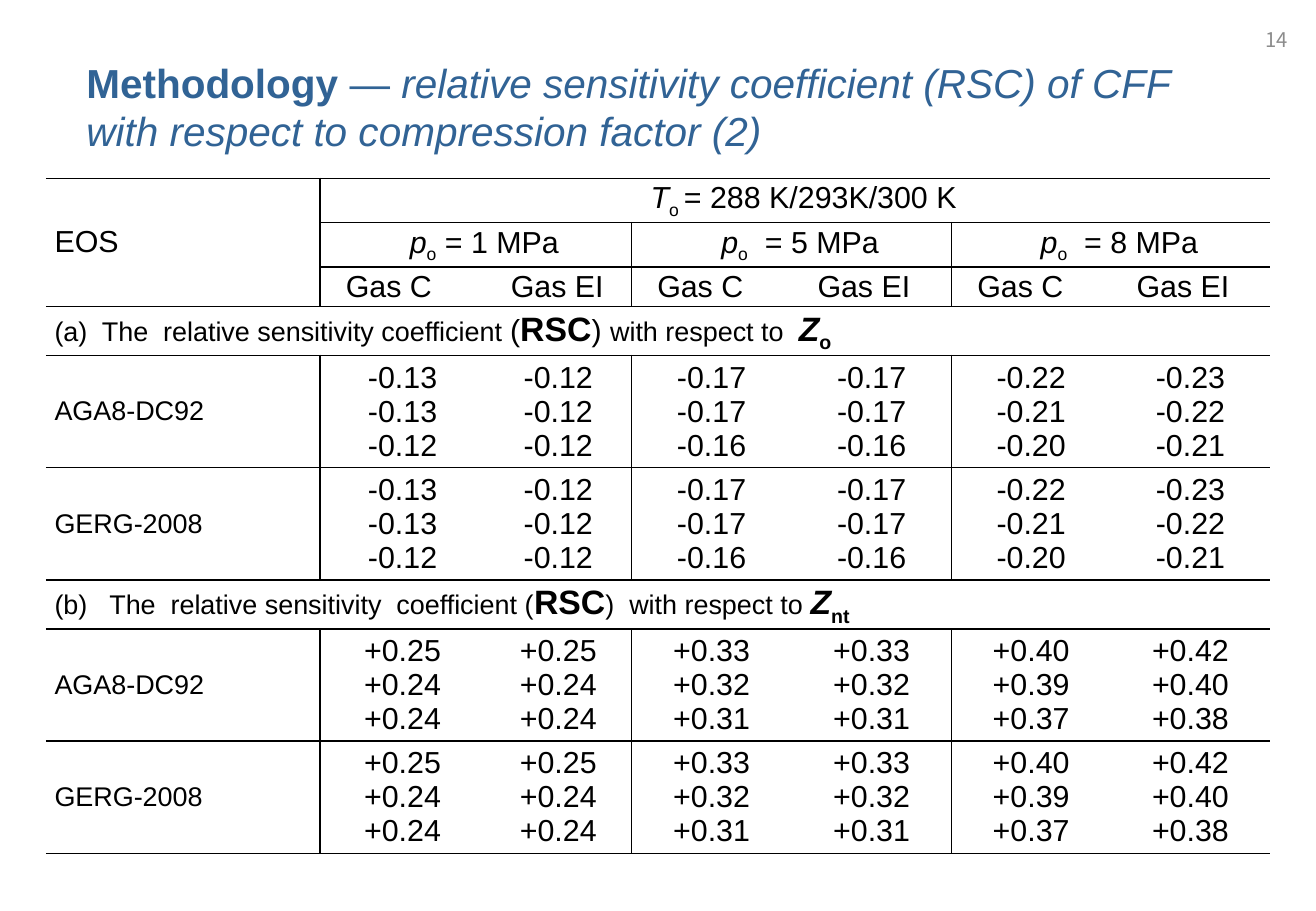
import pptx
import pptx.dml.color
import pptx.enum.text
import pptx.oxml.ns
import pptx.util
from lxml import etree

Cm = pptx.util.Cm
Pt = pptx.util.Pt
ALIGN = pptx.enum.text.PP_ALIGN
ANCHOR = pptx.enum.text.MSO_ANCHOR
BLACK, BLUE, GREY = "000000", "316395", "8C8C8C"
WIDTHS = [5.73, 3.45, 3.06, 3.35, 3.34, 3.33, 3.33]
HEIGHTS = [0.81, 0.91, 0.9, 0.82, 1.0, 2.23, 2.23, 1.0, 2.23, 2.23, 0.81]
EOS = ["AGA8-DC92", "GERG-2008"]
PRESSURES = [" = 1 MPa", "  = 5 MPa", "  = 8 MPa"]
CAPTIONS = {
    4: [("(a)  The  relative sensitivity coefficient ", 16, ""), ("(", 18, ""),
        ("RSC", 20, "b"), (") ", 18, ""), ("with respect to  ", 16, ""),
        ("Z", 20, "bi"), ("o", 20, "bs")],
    7: [("(b)   The  relative sensitivity  coefficient (", 16, ""),
        ("RSC", 20, "b"), (")  with respect to ", 16, ""),
        ("Z", 20, "bi"), ("nt", 20, "bs")],
}
RSC = {
    5: ["-0.13 -0.13 -0.12", "-0.12 -0.12 -0.12", "-0.17 -0.17 -0.16",
        "-0.17 -0.17 -0.16", "-0.22 -0.21 -0.20", "-0.23 -0.22 -0.21"],
    8: ["+0.25 +0.24 +0.24", "+0.25 +0.24 +0.24", "+0.33 +0.32 +0.31",
        "+0.33 +0.32 +0.31", "+0.40 +0.39 +0.37", "+0.42 +0.40 +0.38"],
}


def rgb(code):
    """Turn a hex string into a colour."""
    return pptx.dml.color.RGBColor.from_string(code)


def style(font, size, color=BLACK, name="Arial"):
    """Set size, colour and typeface of a font."""
    font.size, font.name = Pt(size), name
    font.color.rgb = rgb(color)


def write(para, runs, color=BLACK):
    """Add (text, size, marks) runs: b bold, i italic, s subscript."""
    for text, size, marks in runs:
        run = para.add_run()
        run.text = text
        style(run.font, size, color)
        run.font.bold, run.font.italic = "b" in marks, "i" in marks
        if "s" in marks:
            run.font._element.set("baseline", "-25000")


def border(cell, sides):
    """Draw black lines on the named sides and none on the others."""
    props = cell._tc.get_or_add_tcPr()
    for side in "LRTB":
        line = etree.SubElement(props, pptx.oxml.ns.qn("a:ln" + side), w=str(Pt(1)))
        if side in sides:
            fill = etree.SubElement(line, pptx.oxml.ns.qn("a:solidFill"))
            etree.SubElement(fill, pptx.oxml.ns.qn("a:srgbClr"), val=BLACK)
        else:
            etree.SubElement(line, pptx.oxml.ns.qn("a:noFill"))


def sides(row, col):
    """Name the ruled sides of a cell from its place in the grid."""
    last = len(HEIGHTS) - 1
    if row in (0, last):
        return "B" if row == 0 else "T"
    if row in CAPTIONS:
        return "TB"
    if col == 0:
        return "R" + {1: "T", 2: "", 3: "B"}.get(row, "TB")
    ruled = "TB"
    if col == 1 or (row > 1 and col % 2):
        ruled += "L"
    if row > 1 and col in (2, 4):
        ruled += "R"
    if row == 2 and col in (1, 3):
        ruled += "R"
    return ruled


def fill(cell, lines, align=ALIGN.LEFT, indent=0):
    """Write lines of runs into a cell, one paragraph each."""
    frame = cell.text_frame
    for num, runs in enumerate(lines):
        para = frame.add_paragraph() if num else frame.paragraphs[0]
        para.alignment = align
        if indent:
            para._p.get_or_add_pPr().set("marL", str(Cm(indent)))
        write(para, runs)


def shrink(cell):
    """Give an empty cell a small type size, so its row keeps its height."""
    para = cell.text_frame.paragraphs[0]._p
    etree.SubElement(para, pptx.oxml.ns.qn("a:endParaRPr"), sz="800")


def head(table):
    """Fill the three heading rows."""
    fill(table.cell(1, 0), [[("EOS", 18, "")]])
    fill(table.cell(1, 1), [[("T", 18, "i"), ("o ", 18, "s"),
                             ("= 288 K/293K/300 K", 18, "")]], ALIGN.CENTER, 0.36)
    for num, text in enumerate(PRESSURES):
        col = 1 + 2 * num
        fill(table.cell(2, col), [[("p", 18, "i"), ("o", 18, "s"), (text, 18, "")]],
             ALIGN.CENTER, 0.36)
        for step, gas in enumerate(["Gas C", "Gas EI"]):
            fill(table.cell(3, col + step), [[(gas, 18, "")]], indent=0.36)


def body(table):
    """Fill the captions and the coefficient rows."""
    for row, runs in CAPTIONS.items():
        fill(table.cell(row, 0), [runs])
        table.cell(row, 0).vertical_anchor = ANCHOR.BOTTOM
    for top, values in RSC.items():
        for row, name in enumerate(EOS, top):
            fill(table.cell(row, 0), [[(name, 16, "")]])
            for col, text in enumerate(values, 1):
                fill(table.cell(row, col), [[(part, 18, "")] for part in text.split()],
                     ALIGN.CENTER)


def grid(slide, left, top):
    """Build the ruled table at the given corner."""
    frame = slide.shapes.add_table(len(HEIGHTS), len(WIDTHS), Cm(left), Cm(top),
                                   Cm(sum(WIDTHS)), Cm(sum(HEIGHTS)))
    table = frame.table
    table.first_row = table.horz_banding = False
    for col, width in zip(table.columns, WIDTHS):
        col.width = Cm(width)
    for row, height in zip(table.rows, HEIGHTS):
        row.height = Cm(height)
    for row in range(len(HEIGHTS)):
        for col in range(len(WIDTHS)):
            cell = table.cell(row, col)
            cell.margin_left = cell.margin_right = Cm(0.18)
            cell.margin_top = cell.margin_bottom = Cm(0.03)
            cell.vertical_anchor = ANCHOR.MIDDLE
            border(cell, sides(row, col))
            cell.fill.background()
    for row in (0, 4, 7, len(HEIGHTS) - 1):
        table.cell(row, 0).merge(table.cell(row, 6))
    table.cell(1, 0).merge(table.cell(3, 0))
    table.cell(1, 1).merge(table.cell(1, 6))
    for col in (1, 3, 5):
        table.cell(2, col).merge(table.cell(2, col + 1))
    head(table)
    body(table)
    for cell in table.iter_cells():
        if not cell.text_frame.text:
            shrink(cell)


def title(slide, left, top, width, height):
    """Place and write the slide title."""
    shape = slide.shapes.title
    shape.left, shape.top, shape.width, shape.height = map(Cm, (left, top, width, height))
    frame = shape.text_frame
    frame.word_wrap = True
    frame.auto_size = pptx.enum.text.MSO_AUTO_SIZE.NONE
    frame.vertical_anchor = ANCHOR.MIDDLE
    para = frame.paragraphs[0]
    para.alignment = ALIGN.LEFT
    write(para, [("Methodology ", 24, "b"), ("― ", 24, ""),
                 ("relative sensitivity coefficient (RSC) of CFF "
                  "with respect to compression factor (2)", 24, "i")], BLUE)


def number(slide, left, top, width, height):
    """Write the page number at the right of its box."""
    frame = slide.shapes.add_textbox(*map(Cm, (left, top, width, height))).text_frame
    frame.word_wrap = True
    frame.vertical_anchor = ANCHOR.MIDDLE
    para = frame.paragraphs[0]
    para.text = "14"
    para.alignment = ALIGN.RIGHT
    style(para.font, 12, GREY, "Noto Sans CJK KR")


def main():
    """Build the slide and save it."""
    deck = pptx.Presentation()
    deck.slide_width, deck.slide_height = Cm(27.51), Cm(19.05)
    slide = deck.slides.add_slide(deck.slide_layouts[5])
    title(slide, 1.55, 1.12, 24, 2.21)
    number(slide, 20.75, 0.31, 6.43, 1.02)
    grid(slide, 0.96, 2.92)
    deck.save("out.pptx")


if __name__ == "__main__":
    main()
